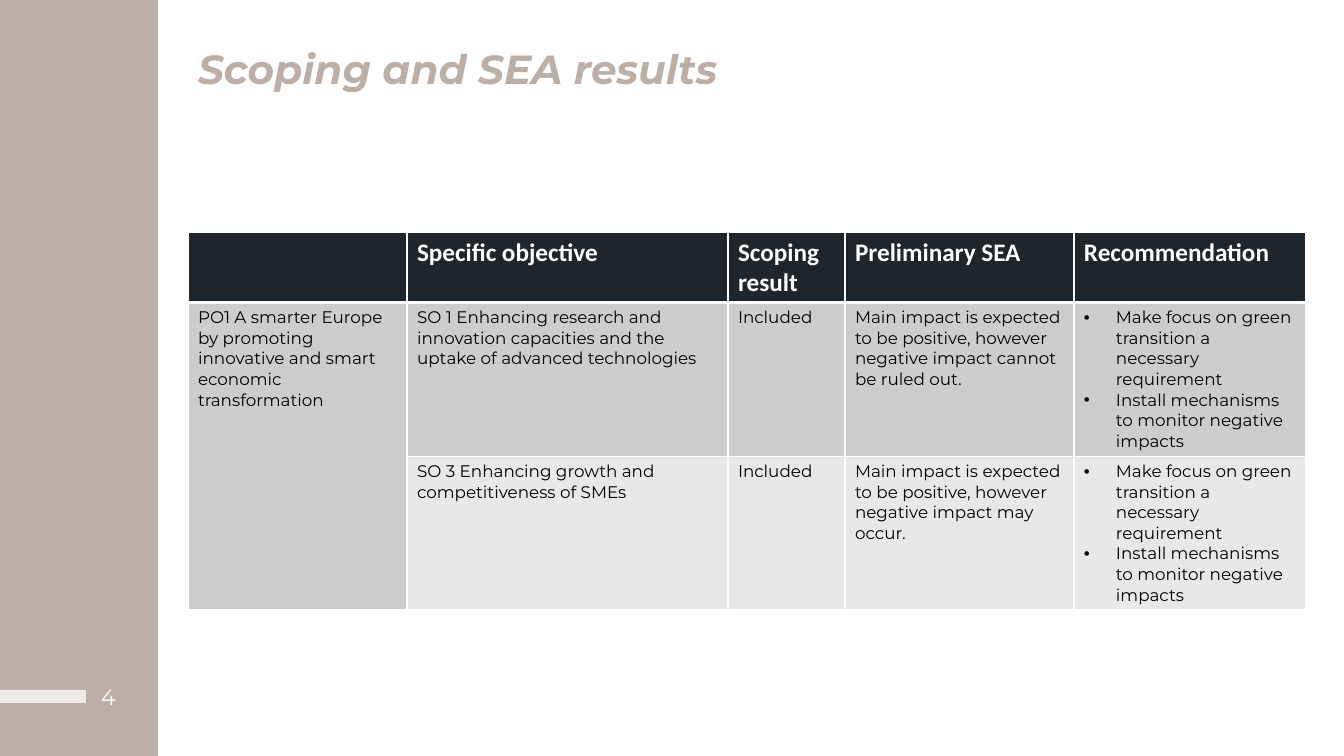
"""Builds the slide with the scoping and SEA results table."""
from lxml import etree
from pptx import Presentation
from pptx.dml.color import RGBColor
from pptx.enum.shapes import MSO_SHAPE
from pptx.enum.text import MSO_ANCHOR, MSO_AUTO_SIZE, PP_ALIGN
from pptx.oxml.ns import qn
from pptx.util import Emu, Pt

RECT = MSO_SHAPE.RECTANGLE
TOP = MSO_ANCHOR.TOP
LEFT = PP_ALIGN.LEFT
FIXED = MSO_AUTO_SIZE.NONE

TITLE = "Scoping and SEA results"
NUMBER = "4"
HEADS = ["", "Specific objective", "Scoping result", "Preliminary SEA", "Recommendation"]
GOAL = "PO1 A smarter Europe by promoting innovative and smart economic transformation\u00a0"
ADVICE = [
    "Make focus on green transition a necessary requirement",
    "Install mechanisms to monitor negative impacts",
]
ROWS = [
    [GOAL,
     "SO 1 Enhancing research and innovation capacities and the uptake of advanced technologies",
     "Included",
     "Main impact is expected to be positive, however negative impact cannot be ruled out.",
     ADVICE],
    ["",
     "SO 3 Enhancing growth and competitiveness of SMEs",
     "Included",
     "Main impact is expected to be positive, however negative impact may occur.",
     ADVICE],
]

COLORS = {"sand": "BCAFA7", "white": "FFFFFF", "dark": "1E252B",
          "mid": "CDCDCD", "pale": "E8E8E8", "black": "000000"}
FILLS = ["dark", "mid", "pale"]
WIDTHS = [219, 321, 117, 229, 232]
HEIGHTS = [70, 154, 153]
INDENT = 32

FONTS = {
    "title": {"name": "Montserrat", "size": Pt(29), "bold": True, "italic": True},
    "number": {"name": "Montserrat", "size": Pt(16)},
    "head": {"name": "Calibri", "size": Pt(18), "bold": True},
    "body": {"name": "Montserrat", "size": Pt(12), "bold": False},
}
SCALE = 914400 / 100.8


def px(n):
    return Emu(round(n * SCALE))


def box(*sides):
    return [px(n) for n in sides]


def rgb(name):
    return RGBColor.from_string(COLORS[name])


def style(para, kind, color):
    for key, value in FONTS[kind].items():
        setattr(para.font, key, value)
    para.font.color.rgb = rgb(color)


def add_bar(slide, color, *sides):
    bar = slide.shapes.add_shape(RECT, *box(*sides))
    bar.shadow.inherit = False
    bar.fill.solid()
    bar.fill.fore_color.rgb = rgb(color)
    bar.line.fill.background()
    return bar


def add_bullet(para):
    props = para._p.get_or_add_pPr()
    props.set("marL", str(px(INDENT)))
    props.set("indent", str(-px(INDENT)))
    etree.SubElement(props, qn("a:buFont")).set("typeface", "Arial")
    etree.SubElement(props, qn("a:buChar")).set("char", "•")


def add_edges(cell, row):
    props = cell._tc.get_or_add_tcPr()
    thick = {0: "lnB", 1: "lnT"}.get(row)
    for side in ("lnL", "lnR", "lnT", "lnB"):
        width = Pt(3 if side == thick else 1)
        line = etree.SubElement(props, qn("a:" + side), w=str(width))
        fill = etree.SubElement(line, qn("a:solidFill"))
        etree.SubElement(fill, qn("a:srgbClr")).set("val", COLORS["white"])


def fill_cell(cell, content, row):
    add_edges(cell, row)
    cell.fill.solid()
    cell.fill.fore_color.rgb = rgb(FILLS[row])
    kind, color = ("body", "black") if row else ("head", "white")
    listed = isinstance(content, list)
    lines = content if listed else [content]
    frame = cell.text_frame
    for i, line in enumerate(lines):
        para = frame.add_paragraph() if i else frame.paragraphs[0]
        para.text = line
        if listed:
            add_bullet(para)
        style(para, kind, color)


def add_grid(slide):
    data = [HEADS] + ROWS
    sides = box(188, 232, sum(WIDTHS), sum(HEIGHTS))
    table = slide.shapes.add_table(len(data), len(HEADS), *sides).table
    for col, width in zip(table.columns, WIDTHS):
        col.width = px(width)
    for row, height in zip(table.rows, HEIGHTS):
        row.height = px(height)
    for r, line in enumerate(data):
        for c, content in enumerate(line):
            fill_cell(table.cell(r, c), content, r)
    table.cell(1, 0).merge(table.cell(2, 0))


def set_title(slide):
    title = slide.shapes.title
    title.left, title.top, title.width, title.height = box(188, 44, 1076, 72)
    frame = title.text_frame
    frame.text = TITLE
    frame.auto_size = FIXED
    frame.vertical_anchor = TOP
    para = frame.paragraphs[0]
    para.alignment = LEFT
    para.line_spacing = 0.9
    style(para, "title", "sand")


def add_number(slide):
    frame = slide.shapes.add_textbox(*box(96, 678, 34, 36)).text_frame
    for side in ("left", "right", "top", "bottom"):
        setattr(frame, "margin_" + side, px(5))
    frame.text = NUMBER
    style(frame.paragraphs[0], "number", "white")


def main():
    deck = Presentation()
    deck.slide_width, deck.slide_height = box(1344, 756)
    slide = deck.slides.add_slide(deck.slide_layouts[5])
    add_bar(slide, "sand", 0, 0, 158, 756)
    add_number(slide)
    dash = add_bar(slide, "white", 0, 690, 86, 13)
    tint = dash._element.spPr.find(".//" + qn("a:srgbClr"))
    etree.SubElement(tint, qn("a:alpha")).set("val", "75000")
    set_title(slide)
    add_grid(slide)
    deck.save("out.pptx")


if __name__ == "__main__":
    main()
